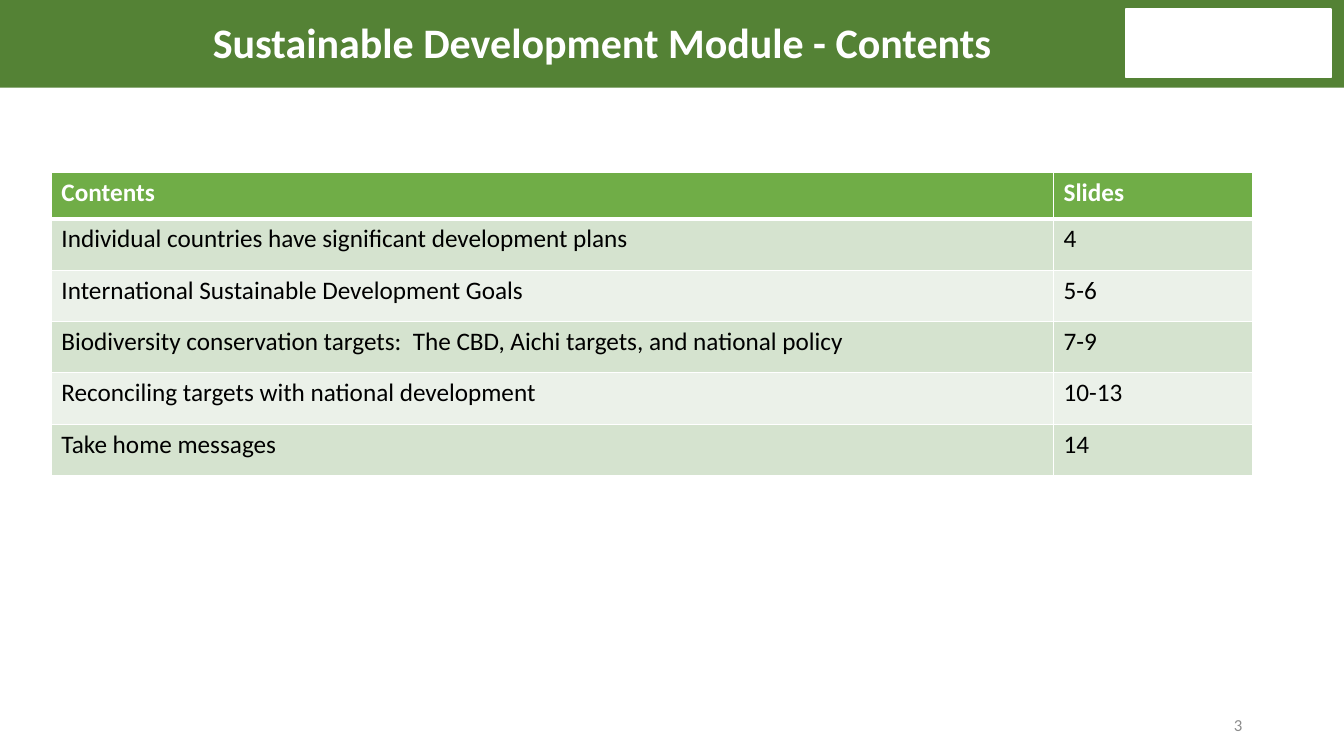
import pptx
import pptx.dml.color
import pptx.enum.shapes
import pptx.enum.text
import pptx.oxml
import pptx.oxml.ns
import pptx.util

Inches = pptx.util.Inches
Pt = pptx.util.Pt
RGBColor = pptx.dml.color.RGBColor
PP_ALIGN = pptx.enum.text.PP_ALIGN
MIDDLE = pptx.enum.text.MSO_ANCHOR.MIDDLE

WHITE = RGBColor(0xFF, 0xFF, 0xFF)
BLACK = RGBColor(0, 0, 0)
GRAY = RGBColor(0x8C, 0x8C, 0x8C)
DARK_GREEN = RGBColor(0x54, 0x82, 0x35)
HEADER_GREEN = RGBColor(0x70, 0xAD, 0x47)
BANDS = (RGBColor(0xD5, 0xE3, 0xCF), RGBColor(0xEB, 0xF1, 0xE9))

CONTENTS = [
    ("Contents", "Slides"),
    ("Individual countries have significant development plans", "4"),
    ("International Sustainable Development Goals", "5-6"),
    ("Biodiversity conservation targets:  The CBD, Aichi targets, and national policy", "7-9"),
    ("Reconciling targets with national development", "10-13"),
    ("Take home messages", "14"),
]


class SlideBuilder:
    font = "Calibri"

    def __init__(self, slide):
        self.s = slide

    def fill_text(self, tf, text, size, color, bold=False, **para):
        p = tf.paragraphs[0]
        for name, value in para.items():
            setattr(p, name, value)
        r = p.add_run()
        r.text = text
        style = {"name": self.font, "size": Pt(size), "bold": bold}
        for name, value in style.items():
            setattr(r.font, name, value)
        r.font.color.rgb = color

    def text(self, box, text, size, color, **style):
        tf = self.s.shapes.add_textbox(*map(Inches, box)).text_frame
        tf.word_wrap = True
        tf.vertical_anchor = MIDDLE
        self.fill_text(tf, text, size, color, **style)

    def rect(self, box, fill, line=None):
        sp = self.s.shapes.add_shape(
            pptx.enum.shapes.MSO_SHAPE.RECTANGLE, *map(Inches, box))
        sp.shadow.inherit = False
        sp.fill.solid()
        sp.fill.fore_color.rgb = fill
        if line is None:
            sp.line.fill.background()
        else:
            sp.line.color.rgb = line
            sp.line.width = Pt(1)

    def borders(self, cell, **widths):
        tc_pr = cell._tc.get_or_add_tcPr()
        for side in "LRTB":
            tc_pr.append(pptx.oxml.parse_xml(
                f'<a:ln{side} {pptx.oxml.ns.nsdecls("a")} w="{Pt(widths.get(side, 1))}">'
                f'<a:solidFill><a:srgbClr val="{WHITE}"/></a:solidFill></a:ln{side}>'))

    def table(self, box, rows, col_widths, header_height, row_height):
        table = self.s.shapes.add_table(
            len(rows), len(col_widths), *map(Inches, box)).table
        for column, width in zip(table.columns, col_widths):
            column.width = Inches(width)
        for i, values in enumerate(rows):
            header = i == 0
            table.rows[i].height = Inches(header_height if header else row_height)
            # A thicker rule separates the header from the body
            rule = {0: {"B": 3}, 1: {"T": 3}}.get(i, {})
            for j, value in enumerate(values):
                cell = table.cell(i, j)
                self.borders(cell, **rule)
                cell.fill.solid()
                cell.fill.fore_color.rgb = HEADER_GREEN if header else BANDS[(i - 1) % 2]
                self.fill_text(cell.text_frame, value, 18, WHITE if header else BLACK,
                               bold=header)


def main():
    prs = pptx.Presentation()
    prs.slide_width, prs.slide_height = Inches(13.33), Inches(7.5)
    b = SlideBuilder(prs.slides.add_slide(prs.slide_layouts[6]))

    # Page number
    b.text((11.54, 7.04, 0.88, 0.31), "3", 12, GRAY, alignment=PP_ALIGN.RIGHT)

    # Title band with its white panel
    b.rect((0, -0.03, 13.33, 0.9), DARK_GREEN)
    b.rect((11.17, 0.09, 2.03, 0.68), WHITE, line=WHITE)
    b.text((0.8, 0, 10.35, 0.9), "Sustainable Development Module - Contents", 30, WHITE,
           bold=True, alignment=PP_ALIGN.CENTER, line_spacing=0.9)

    # Contents table
    b.table((0.51, 1.71, 11.91, 3.02), CONTENTS, (9.94, 1.97), 0.46, 0.51)

    prs.save("out.pptx")


if __name__ == "__main__":
    main()
